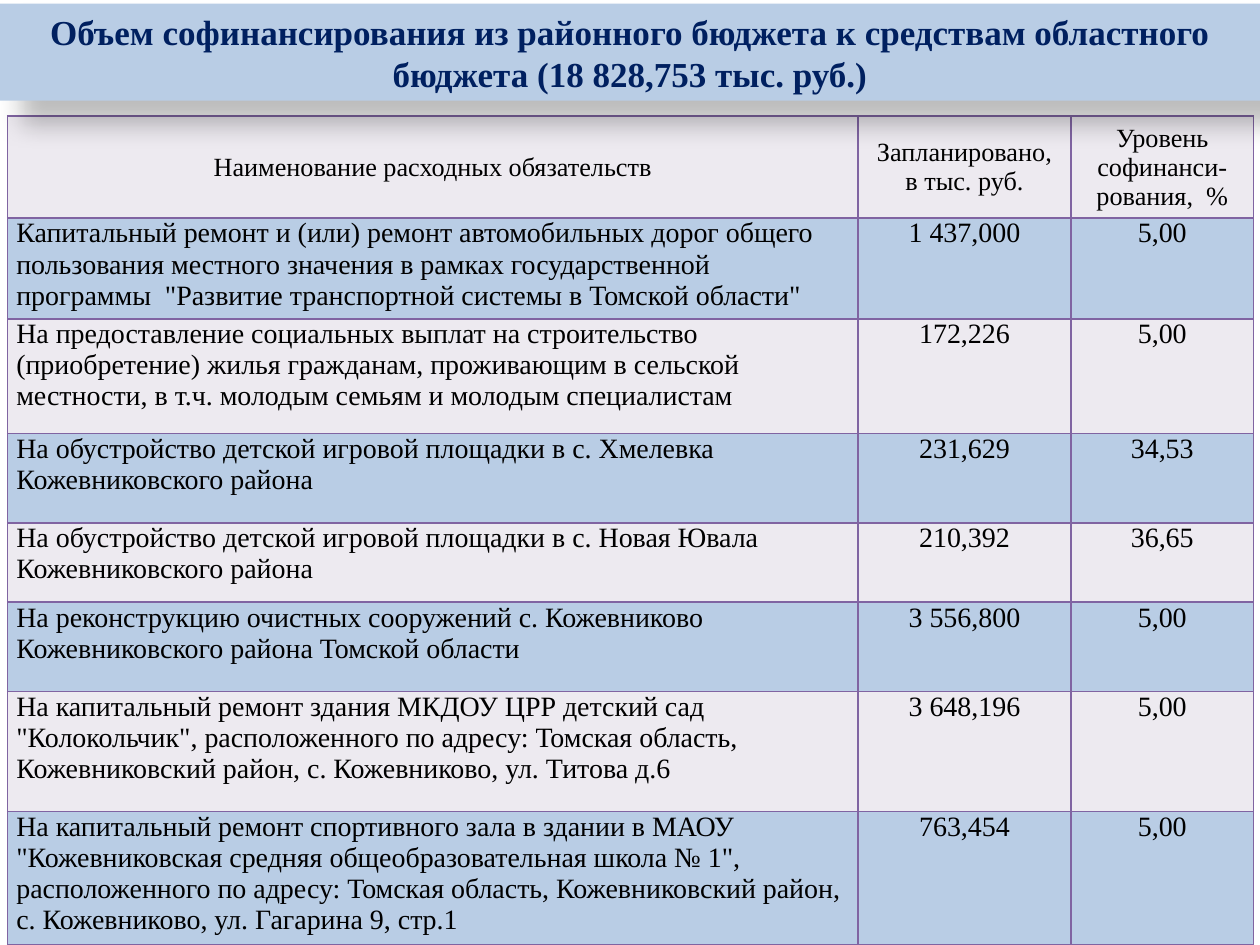
from lxml import etree
from pptx import Presentation
from pptx.dml.color import RGBColor
from pptx.enum.shapes import MSO_SHAPE
from pptx.enum.text import MSO_ANCHOR, PP_ALIGN
from pptx.oxml import parse_xml
from pptx.oxml.ns import nsdecls
from pptx.util import Inches, Pt

RECTANGLE = MSO_SHAPE.RECTANGLE
TOP, MIDDLE = MSO_ANCHOR.TOP, MSO_ANCHOR.MIDDLE
LEFT, CENTER = PP_ALIGN.LEFT, PP_ALIGN.CENTER

BLUE = RGBColor(0xB9, 0xCD, 0xE5)
LILAC = RGBColor(0xED, 0xEA, 0xF0)
PURPLE = RGBColor(0x80, 0x64, 0xA2)
NAVY = RGBColor(0x00, 0x20, 0x60)
BLACK = RGBColor(0x00, 0x00, 0x00)

TITLE = ("Объем софинансирования из районного бюджета к средствам областного "
         "бюджета (18 828,753 тыс. руб.)")
HEADER = ("Наименование расходных обязательств",
          "Запланировано,\nв тыс. руб.",
          "Уровень софинанси-рования,  %")
# Row height, obligation, planned sum, share of co-financing
OBLIGATIONS = [
    (8.0, "Капитальный ремонт и (или) ремонт автомобильных дорог общего "
          "пользования местного значения в рамках государственной программы  "
          "\"Развитие транспортной системы в Томской области\"",
     "1 437,000", "5,00"),
    (9.1, "На предоставление социальных выплат на строительство (приобретение) "
          "жилья гражданам, проживающим в сельской местности, в т.ч. молодым "
          "семьям и молодым специалистам",
     "172,226", "5,00"),
    (7.1, "На обустройство детской игровой площадки в с. Хмелевка "
          "Кожевниковского района",
     "231,629", "34,53"),
    (6.3, "На обустройство детской игровой площадки в с. Новая Ювала "
          "Кожевниковского района",
     "210,392", "36,65"),
    (7.1, "На реконструкцию очистных сооружений с. Кожевниково "
          "Кожевниковского района Томской области",
     "3 556,800", "5,00"),
    (9.5, "На капитальный ремонт здания МКДОУ ЦРР детский сад \"Колокольчик\", "
          "расположенного по адресу: Томская область, Кожевниковский район, "
          "с. Кожевниково, ул. Титова д.6",
     "3 648,196", "5,00"),
    (10.6, "На капитальный ремонт спортивного зала в здании в МАОУ "
           "\"Кожевниковская средняя общеобразовательная школа № 1\", "
           "расположенного по адресу: Томская область, Кожевниковский район, "
           "с. Кожевниково, ул. Гагарина 9, стр.1",
     "763,454", "5,00"),
]


def grid(units):
    """Length in grid units: the slide has 100 columns and 75 rows."""
    return Inches(units / 10)


def write(frame, text, size=16, color=BLACK, bold=False, align=CENTER):
    """Fill a text frame, one paragraph for each line of text."""
    frame.word_wrap = True
    for index, line in enumerate(text.split("\n")):
        para = frame.paragraphs[0] if index == 0 else frame.add_paragraph()
        para.alignment = align
        span = para.add_run()
        span.text = line
        span.font.name = "Times New Roman"
        span.font.size = Pt(size)
        span.font.bold = bold
        span.font.color.rgb = color


class SlideBuilder:
    def __init__(self, deck):
        self.page = deck.slides.add_slide(deck.slide_layouts[6])
        self.border, self.border_width = PURPLE, Pt(1)

    def banner(self, left, top, width, height, text, fill):
        box = self.page.shapes.add_shape(
            RECTANGLE, grid(left), grid(top), grid(width), grid(height))
        box.fill.solid()
        box.fill.fore_color.rgb = fill
        box.line.fill.background()
        box.shadow.inherit = False
        self.drop_shadow(box)
        write(box.text_frame, text, size=20, color=NAVY, bold=True)

    def drop_shadow(self, box):
        effects = box.fill._xPr.find("{*}effectLst")
        effects.append(parse_xml(
            f'<a:outerShdw {nsdecls("a")} blurRad="{Pt(15)}" dist="{Pt(18)}" '
            'dir="2700000" algn="tl" rotWithShape="0"><a:srgbClr val="000000">'
            '<a:alpha val="26000"/></a:srgbClr></a:outerShdw>'))

    def table(self, left, top, columns, heights, rows):
        table = self.page.shapes.add_table(
            len(rows), len(columns), grid(left), grid(top),
            grid(sum(columns)), grid(sum(heights))).table
        for column, width in zip(table.columns, columns):
            column.width = grid(width)
        for row, height in zip(table.rows, heights):
            row.height = grid(height)
        for row_index, texts in enumerate(rows):
            for column_index, text in enumerate(texts):
                self.cell(table.cell(row_index, column_index), text,
                          header=row_index == 0,
                          fill=BLUE if row_index % 2 else LILAC,
                          align=LEFT if row_index and not column_index else CENTER)

    def cell(self, cell, text, header, fill, align):
        cell.fill.solid()
        cell.fill.fore_color.rgb = fill
        cell.vertical_anchor = MIDDLE if header else TOP
        cell.margin_left = cell.margin_right = Inches(0.01 if header else 0.07)
        cell.margin_top = Inches(0.01 if header else 0)
        cell.margin_bottom = 0
        write(cell.text_frame, text, size=15 if header else 16, align=align)
        self.cell_borders(cell)

    def cell_borders(self, cell):
        properties = cell._tc.get_or_add_tcPr()
        for index, side in enumerate(("lnL", "lnR", "lnT", "lnB")):
            line = parse_xml(f'<a:{side} {nsdecls("a")} w="{self.border_width}"/>')
            fill = etree.SubElement(line, line.tag.replace(side, "solidFill"))
            etree.SubElement(fill, line.tag.replace(side, "srgbClr"),
                             val=str(self.border))
            properties.insert(index, line)


def main():
    deck = Presentation()
    deck.slide_width, deck.slide_height = grid(100), grid(75)
    slide = SlideBuilder(deck)

    # Table of obligations
    heights = [8.1] + [height for height, *_ in OBLIGATIONS]
    rows = [HEADER] + [texts for _, *texts in OBLIGATIONS]
    slide.table(0.6, 9.2, (67.5, 16.9, 14.5), heights, rows)

    # Title banner, its shadow falls on the table
    slide.banner(0, 0.3, 100, 7.7, TITLE, BLUE)

    deck.save("out.pptx")


if __name__ == "__main__":
    main()
